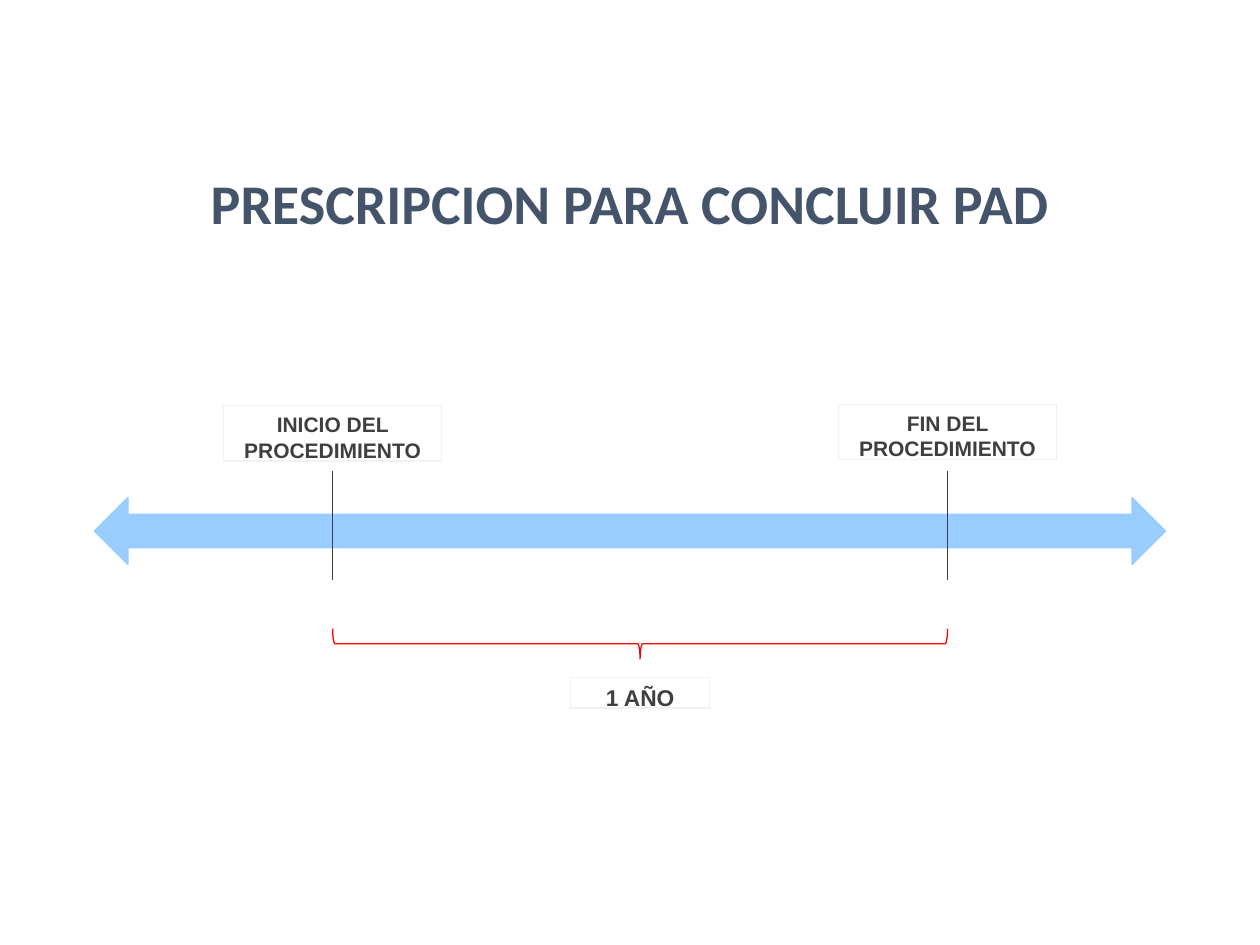
from lxml import etree
from pptx import Presentation
from pptx.dml.color import RGBColor
from pptx.enum import shapes, text
from pptx.oxml import ns
from pptx.util import Inches, Pt

# Content
TITLE = "PRESCRIPCION PARA CONCLUIR PAD"
MILESTONES = [  # label, x of the mark, top of the label
    ("INICIO DEL PROCEDIMIENTO", 2.64, 3.22),
    ("FIN DEL PROCEDIMIENTO", 7.52, 3.21),
]
DURATION = "1 AÑO"

THEME = dict(
    title="44546A", ink="3F3F3F", arrow="99CCFF", brace="FF0000",
    box="FFFFFF", border="F2F2F2",
    head_font="Calibri", body_font="Arial",
    title_size=32, label_size=12, duration_size=13, line=0.75,
)


def rgb(name):
    return RGBColor.from_string(THEME[name])


def write(sp, words, *, size, color="ink", font="body_font"):
    """Put bold, centred, top-anchored text in a shape."""
    tf = sp.text_frame
    tf.word_wrap = True
    tf.auto_size = text.MSO_AUTO_SIZE.NONE
    tf.vertical_anchor = text.MSO_ANCHOR.TOP
    p = tf.paragraphs[0]
    p.alignment = text.PP_ALIGN.CENTER
    r = p.add_run()
    r.text = words
    r.font.name = THEME[font]
    r.font.size = Pt(THEME[size])
    r.font.bold = True
    r.font.color.rgb = rgb(color)


def add_shape(kind, x, y, w, h, *, fill=None, line, width=THEME["line"]):
    sp = slide.shapes.add_shape(kind, Inches(x), Inches(y), Inches(w), Inches(h))
    sp.shadow.inherit = False
    if fill:
        sp.fill.solid()
        sp.fill.fore_color.rgb = rgb(fill)
    else:
        sp.fill.background()
    sp.line.color.rgb = rgb(line)
    sp.line.width = Pt(width)
    return sp


def add_label(words, center, y, w, h, size):
    sp = add_shape(shapes.MSO_SHAPE.RECTANGLE, center - w / 2, y, w, h,
                   fill="box", line="border")
    write(sp, words, size=size)


def add_mark(x, top, bottom):
    ln = slide.shapes.add_connector(shapes.MSO_CONNECTOR.STRAIGHT, Inches(x),
                                    Inches(top), Inches(x), Inches(bottom))
    ln.line.color.rgb = rgb("ink")
    ln.line.width = Pt(THEME["line"])
    etree.SubElement(ln._element.spPr, ns.qn("a:effectLst"))


prs = Presentation()
prs.slide_width, prs.slide_height = Inches(10), Inches(7.5)
slide = prs.slides.add_slide(prs.slide_layouts[5])

# Title
title = slide.shapes.title
title.left, title.top = Inches(0.26), Inches(1.29)
title.width, title.height = Inches(9.48), Inches(0.64)
write(title, TITLE, size="title_size", color="title", font="head_font")

# Timeline arrow, marks and labels
add_shape(shapes.MSO_SHAPE.LEFT_RIGHT_ARROW, 0.75, 3.95, 8.5, 0.53,
          fill="arrow", line="arrow", width=0.85)
for _, x, _ in MILESTONES:
    add_mark(x, 3.74, 4.6)
for words, x, top in MILESTONES:
    add_label(words, x, top, 1.73, 0.44, "label_size")

# Brace between the marks, turned to point down
start, end = (x for _, x, _ in MILESTONES)
middle, span, depth, brace_y = (start + end) / 2, end - start, 0.24, 5.11
brace = add_shape(shapes.MSO_SHAPE.LEFT_BRACE, middle - depth / 2,
                  brace_y - span / 2, depth, span, line="brace")
brace.rotation = 270
add_label(DURATION, middle, 5.38, 1.1, 0.24, "duration_size")

prs.save("out.pptx")
